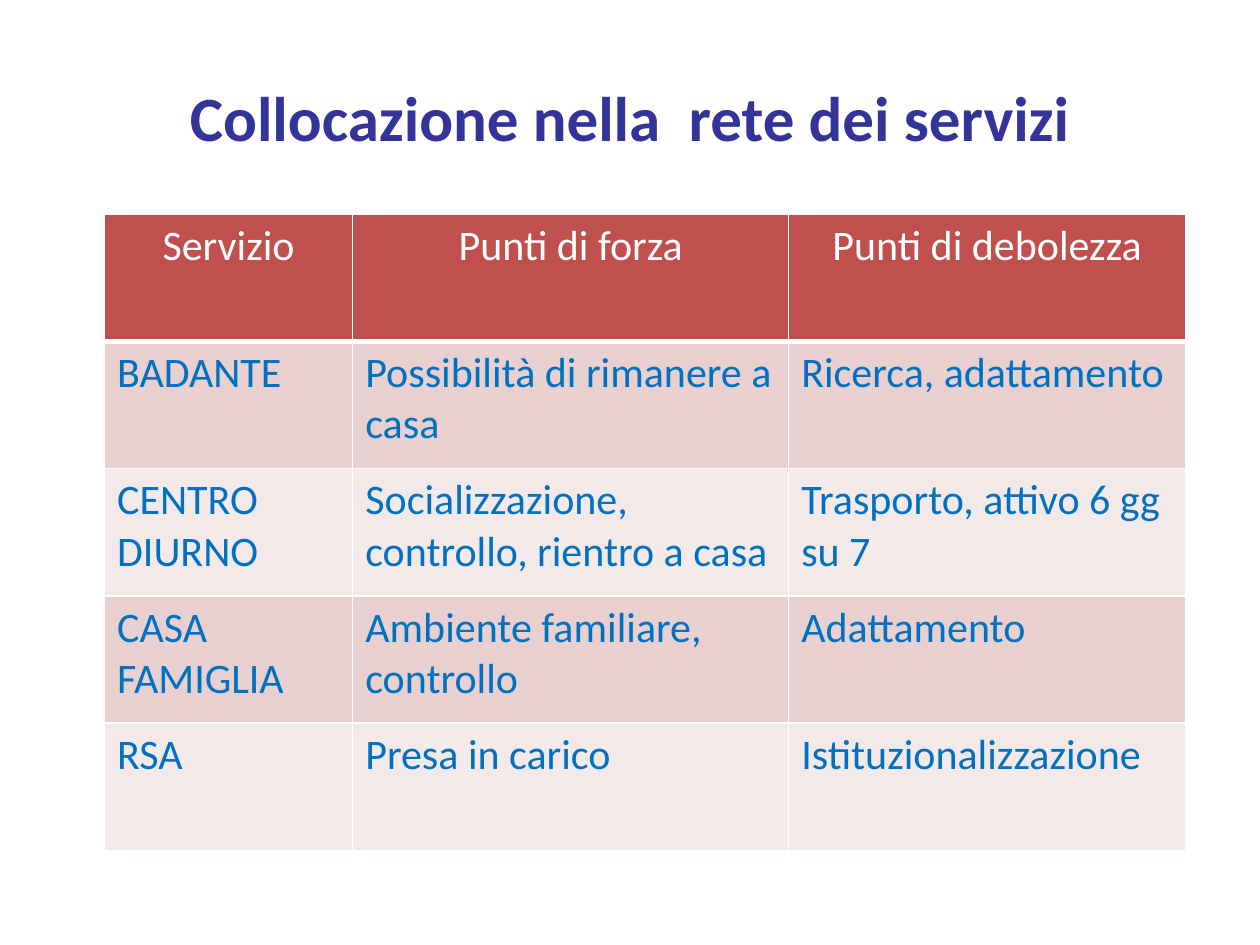
"""Build a slide with a table comparing care services."""
import pptx
import pptx.dml.color
import pptx.enum.text
import pptx.oxml.ns
import pptx.util
from lxml import etree

Inches = pptx.util.Inches
Pt = pptx.util.Pt
ALIGN = pptx.enum.text.PP_ALIGN

TITLE = "Collocazione nella  rete dei servizi"
ROWS = [
    ("Servizio", "Punti di forza", "Punti di debolezza"),
    ("BADANTE", "Possibilità di rimanere a casa", "Ricerca, adattamento"),
    ("CENTRO DIURNO", "Socializzazione, controllo, rientro a casa", "Trasporto, attivo 6 gg su 7"),
    ("CASA FAMIGLIA", "Ambiente familiare,  controllo", "Adattamento"),
    ("RSA", "Presa in carico", "Istituzionalizzazione"),
]
COL_WIDTHS = (1.97, 3.46, 3.15)
ROW_HEIGHT = 1.01
HEADER_FILL = "C0504D"
BAND_FILLS = ("F4E9E9", "E8D0D0")


def rgb(value):
    return pptx.dml.color.RGBColor.from_string(value)


def write(tf, text, size, color, bold, align):
    tf.text = text
    p = tf.paragraphs[0]
    p.alignment = align
    font = p.runs[0].font
    font.name, font.size, font.bold = "Calibri", Pt(size), bold
    font.color.rgb = rgb(color)


def add_borders(cell, bottom):
    qn = pptx.oxml.ns.qn
    tc_pr = cell._tc.get_or_add_tcPr()
    for side, width in (("L", 1), ("R", 1), ("T", 1), ("B", bottom)):
        ln = etree.SubElement(tc_pr, qn(f"a:ln{side}"), w=str(Pt(width)))
        fill = etree.SubElement(ln, qn("a:solidFill"))
        etree.SubElement(fill, qn("a:srgbClr"), val="FFFFFF")


def add_title(s):
    sp = s.shapes.title
    sp.left, sp.top, sp.width, sp.height = map(Inches, (0.5, 0.3, 9, 1.25))
    sp.text_frame.vertical_anchor = pptx.enum.text.MSO_ANCHOR.MIDDLE
    write(sp.text_frame, TITLE, 36, "333399", True, ALIGN.CENTER)


def add_services_table(s):
    table = s.shapes.add_table(
        len(ROWS), len(COL_WIDTHS), Inches(0.83), Inches(1.7),
        Inches(sum(COL_WIDTHS)), Inches(ROW_HEIGHT * len(ROWS))).table
    for column, width in zip(table.columns, COL_WIDTHS):
        column.width = Inches(width)
    for i, texts in enumerate(ROWS):
        header = i == 0
        table.rows[i].height = Inches(ROW_HEIGHT)
        for j, text in enumerate(texts):
            cell = table.cell(i, j)
            add_borders(cell, 3 if header else 1)
            cell.fill.solid()
            cell.fill.fore_color.rgb = rgb(HEADER_FILL if header else BAND_FILLS[i % 2])
            write(cell.text_frame, text, 24, "FFFFFF" if header else "0070C0",
                  False, ALIGN.CENTER if header else ALIGN.LEFT)


def main():
    prs = pptx.Presentation()
    prs.slide_width, prs.slide_height = Inches(10), Inches(7.5)
    s = prs.slides.add_slide(prs.slide_layouts[5])
    add_title(s)
    add_services_table(s)
    prs.save("out.pptx")


if __name__ == "__main__":
    main()
